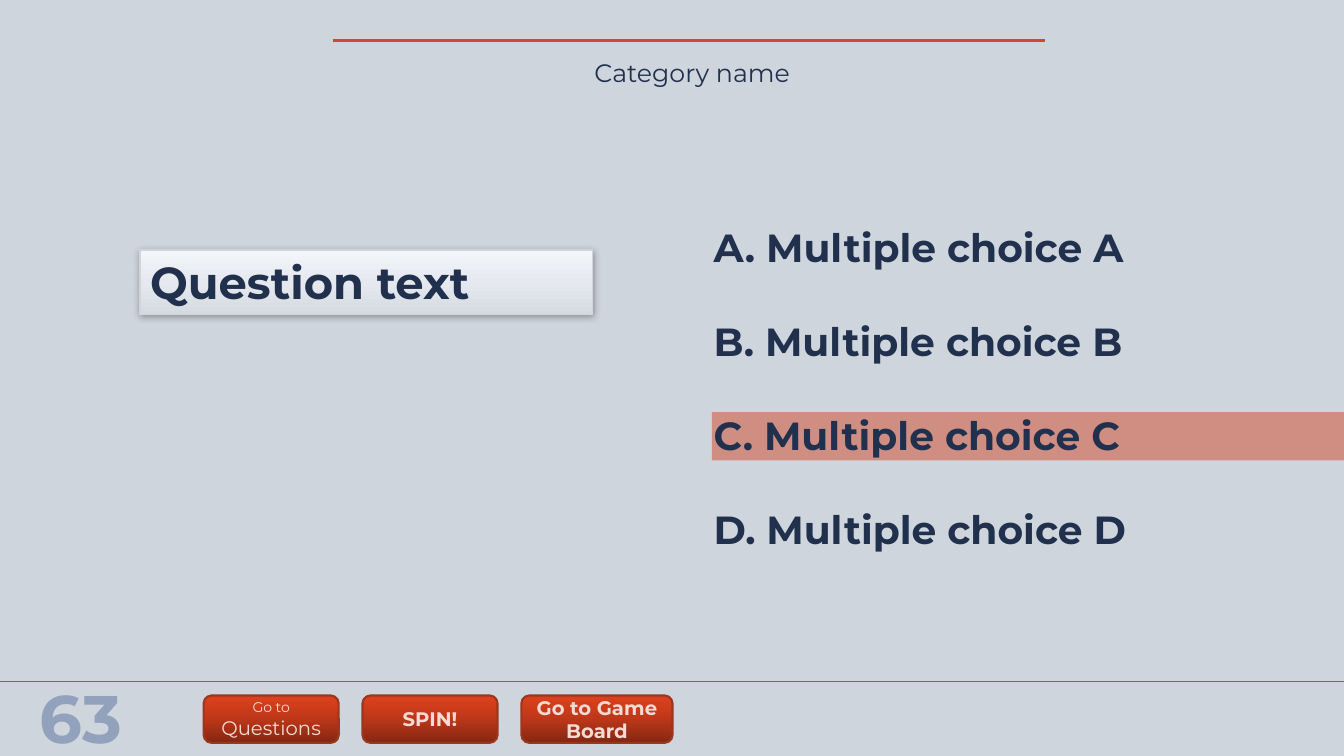
"""Build a quiz answer slide with four choices, the right one highlighted, and navigation buttons."""
import pptx
import pptx.util
import pptx.dml.color
import pptx.enum.shapes
import pptx.enum.text
import pptx.oxml
import pptx.oxml.ns
import copy
from lxml import etree

RGBColor = pptx.dml.color.RGBColor
NAVY = RGBColor(0x21, 0x31, 0x4D)
SLATE = RGBColor(0x92, 0xA2, 0xBD)
RED = RGBColor(0xD2, 0x49, 0x2A)
BRICK = RGBColor(0x9B, 0x36, 0x1F)
BLUSH = RGBColor(0xF6, 0xDA, 0xD4)
MIST = RGBColor(0xCE, 0xD5, 0xDD)
BUTTON_STOPS = [(0, RGBColor(0x84, 0x27, 0x11)), (0.5, RGBColor(0xBC, 0x37, 0x19)),
                (1, RGBColor(0xDF, 0x41, 0x1D))]
QUESTION_STOPS = [(0, RGBColor(0xD4, 0xDA, 0xE1)), (0.48, RGBColor(0xE5, 0xE9, 0xEF)),
                  (1, RGBColor(0xF2, 0xF6, 0xFA))]
PT = pptx.util.Pt
SHAPES = pptx.enum.shapes.MSO_SHAPE
ANCHOR = pptx.enum.text.MSO_ANCHOR
LEFT, CENTER = pptx.enum.text.PP_ALIGN.LEFT, pptx.enum.text.PP_ALIGN.CENTER
qn = pptx.oxml.ns.qn

deck = pptx.Presentation()
deck.slide_width = pptx.util.Inches(13.33)
deck.slide_height = pptx.util.Inches(7.5)
column, row = deck.slide_width / 100, deck.slide_height / 100
slide = deck.slides.add_slide(deck.slide_layouts[6])
slide.background.fill.solid()
slide.background.fill.fore_color.rgb = MIST


def write(holder, lines, size, color, bold, align=CENTER, anchor=ANCHOR.TOP, gap=0, numbered=False):
    """Fill a text holder with evenly spaced paragraphs in one style."""
    frame = holder.text_frame
    frame.word_wrap = True
    frame.vertical_anchor = anchor
    for index, line in enumerate(lines):
        paragraph = frame.paragraphs[0] if index == 0 else frame.add_paragraph()
        paragraph.text = line
        paragraph.alignment = align
        if index:
            paragraph.space_before = PT(gap)
        if numbered:
            props = paragraph._p.get_or_add_pPr()
            props.set("marL", "342900")
            props.set("indent", "-342900")
            etree.SubElement(props, qn("a:buFont"), typeface="+mj-lt")
            etree.SubElement(props, qn("a:buAutoNum"), type="alphaUcPeriod")
        paragraph.font.name = "Montserrat"
        paragraph.font.size = PT(size)
        paragraph.font.bold = bold
        paragraph.font.color.rgb = color


def add_panel(kind, left, top, width, height, stops, edge, edge_width):
    """Add a shape with a gradient that rises from bottom to top."""
    panel = slide.shapes.add_shape(kind, int(left * column), int(top * row),
                                   int(width * column), int(height * row))
    panel.shadow.inherit = False
    panel.fill.gradient()
    panel.fill.gradient_angle = 90
    stop_list = panel._element.spPr.find(qn("a:gradFill")).find(qn("a:gsLst"))
    stop_list.insert(1, copy.deepcopy(stop_list[0]))
    for stop, (position, color) in zip(panel.fill.gradient_stops, stops):
        stop.position = position
        stop.color.rgb = color
    panel.line.color.rgb = edge
    panel.line.width = PT(edge_width)
    return panel


for start, end, height, weight in [(100, 0, 90.13, 1), (24.76, 77.72, 5.33, 2)]:
    rule = slide.shapes.add_connector(pptx.enum.shapes.MSO_CONNECTOR.STRAIGHT,
                                      int(start * column), int(height * row),
                                      int(end * column), int(height * row))
    rule.line.color.rgb = RED
    rule.line.width = PT(weight)
    etree.SubElement(rule._element.spPr, qn("a:effectLst"))

highlight = slide.shapes.add_shape(SHAPES.RECTANGLE, int(52.96 * column), int(54.5 * row),
                                   int(47.04 * column), int(6.4 * row))
highlight.shadow.inherit = False
highlight.fill.solid()
highlight.fill.fore_color.rgb = RED
highlight.line.fill.background()
highlight_color = highlight._element.spPr.find(qn("a:solidFill"))[0]
etree.SubElement(highlight_color, qn("a:alpha"), val="50000")

choices = [f" Multiple choice {letter}" for letter in "ABCD"]
for left, top, width, height, lines, style in [
    (1.58, 88.8, 8.85, 12.13, ["63"], dict(size=48, color=SLATE, bold=True)),
    (25.21, 6.93, 52.59, 5.33, ["Category name"], dict(size=18, color=NAVY, bold=False)),
    (52.36, 28.93, 38.41, 45.33, choices,
     dict(size=28, color=NAVY, bold=True, align=LEFT, gap=33.5, numbered=True)),
]:
    label = slide.shapes.add_textbox(int(left * column), int(top * row),
                                     int(width * column), int(height * row))
    write(label, lines, **style)

question = add_panel(SHAPES.RECTANGLE, 10.43, 33.07, 33.68, 8.53, QUESTION_STOPS, MIST, 1)
write(question, ["Question text"], 32, NAVY, True, LEFT)
effects = question._element.spPr.find(qn("a:effectLst"))
shadow = etree.SubElement(effects, qn("a:outerShdw"), blurRad=str(PT(5)), dist=str(PT(1)),
                          dir="5400000", rotWithShape="0")
shadow_color = etree.SubElement(shadow, qn("a:srgbClr"), val="000000")
etree.SubElement(shadow_color, qn("a:alpha"), val="32000")

for index, (caption, width, bold) in enumerate([
    ("Go to\vQuestions", 10.05, False), ("SPIN!", 10.05, True), ("Go to Game Board", 11.25, True),
]):
    button = add_panel(SHAPES.ROUNDED_RECTANGLE, 15.15 + 11.82 * index, 92, width, 6.27,
                       BUTTON_STOPS, BRICK, 1.5)
    write(button, [caption], 14, BLUSH, bold, anchor=ANCHOR.MIDDLE)
    if "\v" in caption:
        button.text_frame.paragraphs[0].runs[0].font.size = PT(10)

deck.save("out.pptx")
